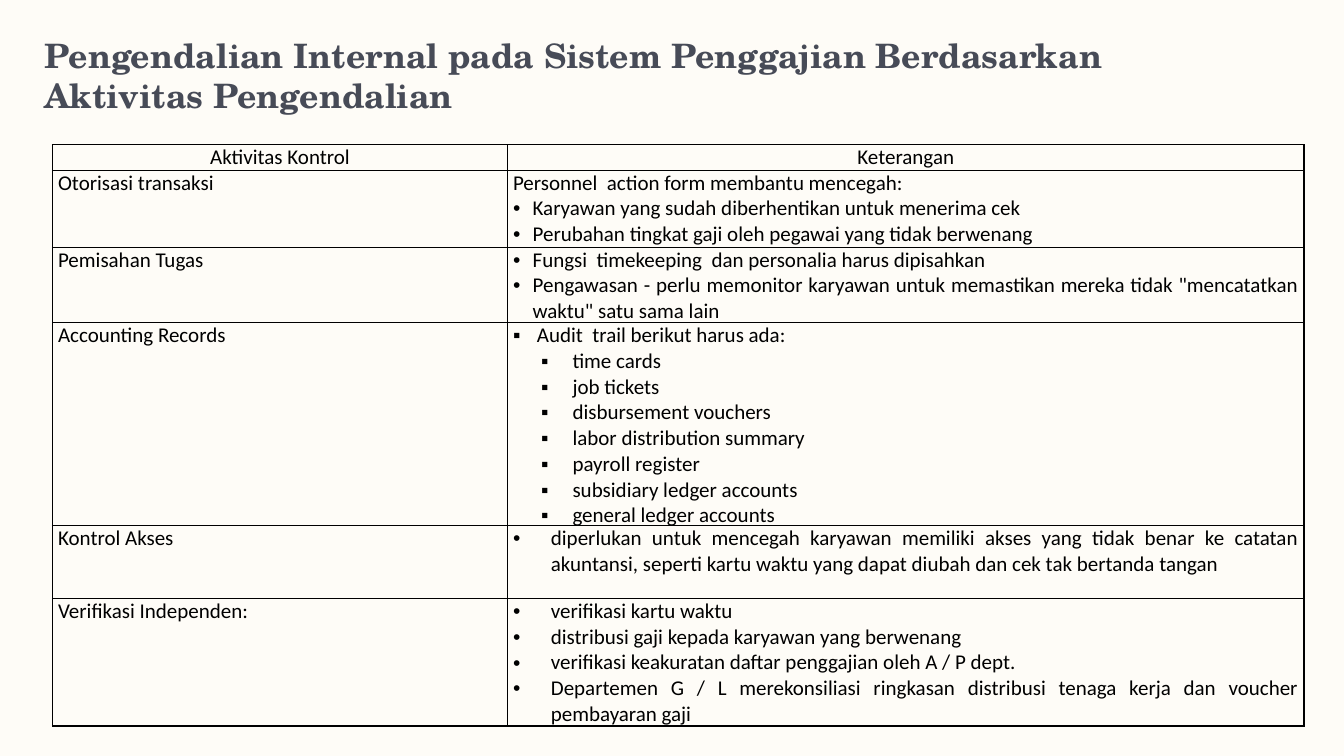
import lxml.etree
import pptx
import pptx.dml.color
import pptx.enum.text
import pptx.oxml.ns
import pptx.util

Pt = pptx.util.Pt
ALIGN = pptx.enum.text.PP_ALIGN
COLORS = {"back": "FEFCF7", "title": "474B57", "ink": "000000"}

TITLE = ["Pengendalian Internal pada Sistem Penggajian Berdasarkan",
         "Aktivitas Pengendalian"]
HEADS = ["Aktivitas Kontrol", "Keterangan"]
COLS = [325, 569]
ROWS = [18, 55, 54, 145, 52, 91]

# Bullet styles: sign, left margin, hanging indent
PLAIN = None
NEAR = ("•", 14, -14)
WIDE = ("•", 27, -27)
MAIN = ("▪", 17, -17)
SUB = ("▪", 42.5, -22.5)

CONTROLS = [
    ("Otorisasi transaksi", [
        (PLAIN, "Personnel  action form membantu mencegah:"),
        (NEAR, "Karyawan yang sudah diberhentikan untuk menerima cek"),
        (NEAR, "Perubahan tingkat gaji oleh pegawai yang tidak berwenang"),
    ]),
    ("Pemisahan Tugas", [
        (NEAR, "Fungsi  timekeeping  dan personalia harus dipisahkan"),
        (NEAR, "Pengawasan - perlu memonitor karyawan untuk memastikan mereka "
               "tidak \"mencatatkan waktu\" satu sama lain"),
    ]),
    ("Accounting Records", [
        (MAIN, "Audit  trail berikut harus ada:"),
        (SUB, "time cards"),
        (SUB, "job tickets"),
        (SUB, "disbursement vouchers"),
        (SUB, "labor distribution summary"),
        (SUB, "payroll register"),
        (SUB, "subsidiary ledger accounts"),
        (SUB, "general ledger accounts"),
    ]),
    ("Kontrol Akses", [
        (WIDE, "diperlukan untuk mencegah karyawan memiliki akses yang tidak "
               "benar ke catatan akuntansi, seperti kartu waktu yang dapat "
               "diubah dan cek tak bertanda tangan"),
    ]),
    ("Verifikasi Independen:", [
        (WIDE, "verifikasi kartu waktu"),
        (WIDE, "distribusi gaji kepada karyawan yang berwenang"),
        (WIDE, "verifikasi keakuratan daftar penggajian oleh A / P dept."),
        (WIDE, "Departemen G / L merekonsiliasi ringkasan distribusi tenaga "
               "kerja dan voucher pembayaran gaji"),
    ]),
]


def color(name):
    return pptx.dml.color.RGBColor.from_string(COLORS[name])


def add_node(parent, tag, **attrs):
    node = lxml.etree.SubElement(parent, pptx.oxml.ns.qn(tag))
    for key, value in attrs.items():
        node.set(key, str(value))
    return node


def set_font(para, name, size, ink, bold=False):
    font = para.font
    font.name, font.size, font.bold = name, Pt(size), bold
    font.color.rgb = color(ink)


def set_bullet(para, style):
    sign, left, hang = style
    props = para._p.get_or_add_pPr()
    props.set("marL", str(Pt(left)))
    props.set("indent", str(Pt(hang)))
    add_node(props, "a:buFont", typeface="Arial")
    add_node(props, "a:buChar", char=sign)


def set_border(cell):
    props = cell._tc.get_or_add_tcPr()
    for side in ("L", "R", "T", "B"):
        line = add_node(props, "a:ln" + side, w=Pt(1))
        fill = add_node(line, "a:solidFill")
        add_node(fill, "a:srgbClr", val=COLORS["ink"])


def fill_cell(cell, items, align=ALIGN.JUSTIFY):
    """Write (bullet style, text) items into a bordered, unfilled cell."""
    cell.margin_left = cell.margin_right = Pt(4)
    cell.margin_top = cell.margin_bottom = Pt(0)
    set_border(cell)
    cell.fill.background()
    frame = cell.text_frame
    for i, (style, text) in enumerate(items):
        para = frame.add_paragraph() if i else frame.paragraphs[0]
        para.text = text
        para.alignment = align
        if style:
            set_bullet(para, style)
        set_font(para, "Calibri", 15, "ink")


def add_title(slide):
    box = slide.shapes.add_textbox(Pt(24.5), Pt(22.5), Pt(893.5), Pt(64))
    frame = box.text_frame
    frame.word_wrap = True
    para = frame.paragraphs[0]
    para.text = "\v".join(TITLE)
    para.line_spacing = 0.99
    set_font(para, "TeX Gyre Schola", 24, "title", True)


def add_grid(slide):
    frame = slide.shapes.add_table(len(ROWS), len(COLS), Pt(37.5), Pt(103.5),
                                   Pt(sum(COLS)), Pt(sum(ROWS)))
    table = frame.table
    table.first_row = table.horz_banding = False
    for col, width in zip(table.columns, COLS):
        col.width = Pt(width)
    for row, height in zip(table.rows, ROWS):
        row.height = Pt(height)
    for i, head in enumerate(HEADS):
        fill_cell(table.cell(0, i), [(PLAIN, head)], ALIGN.CENTER)
    for i, (name, notes) in enumerate(CONTROLS, 1):
        fill_cell(table.cell(i, 0), [(PLAIN, name)])
        fill_cell(table.cell(i, 1), notes)


def main():
    deck = pptx.Presentation()
    deck.slide_width, deck.slide_height = Pt(960), Pt(540)
    slide = deck.slides.add_slide(deck.slide_layouts[6])
    slide.background.fill.solid()
    slide.background.fill.fore_color.rgb = color("back")
    add_title(slide)
    add_grid(slide)
    deck.save("out.pptx")


if __name__ == "__main__":
    main()
